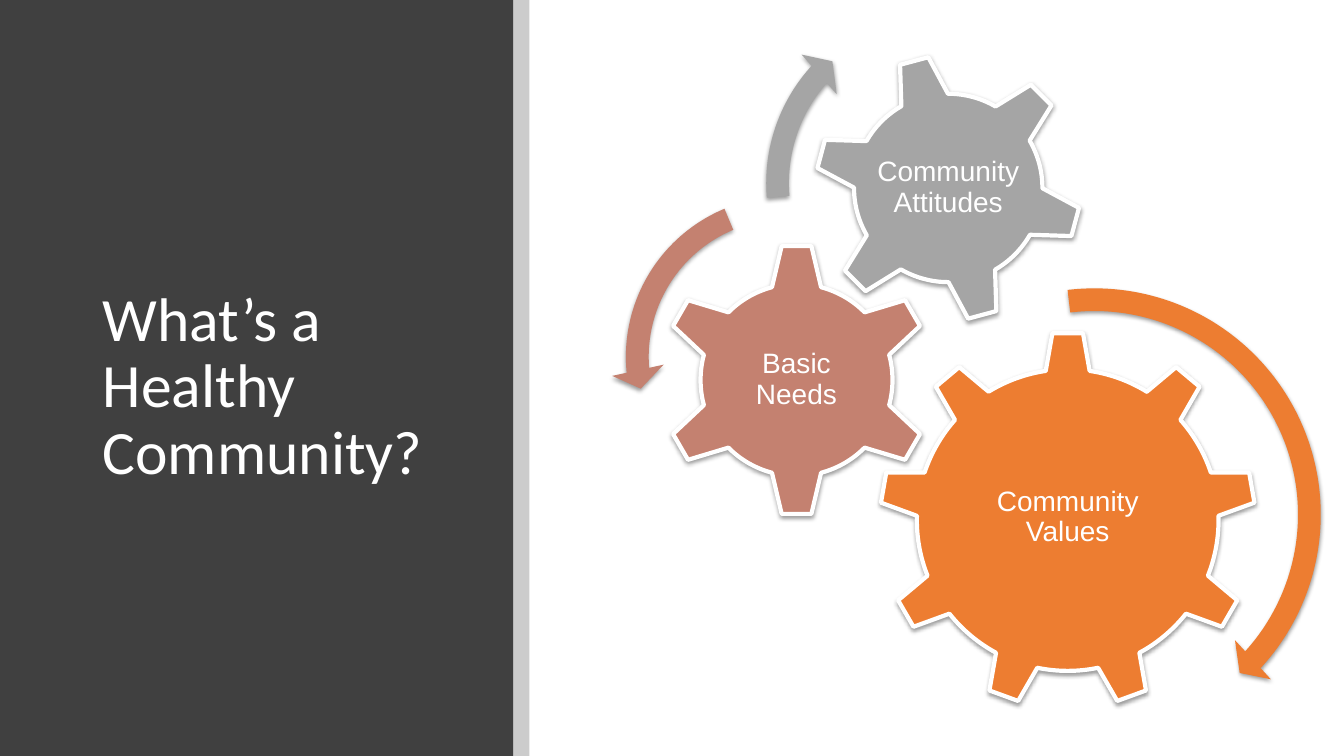
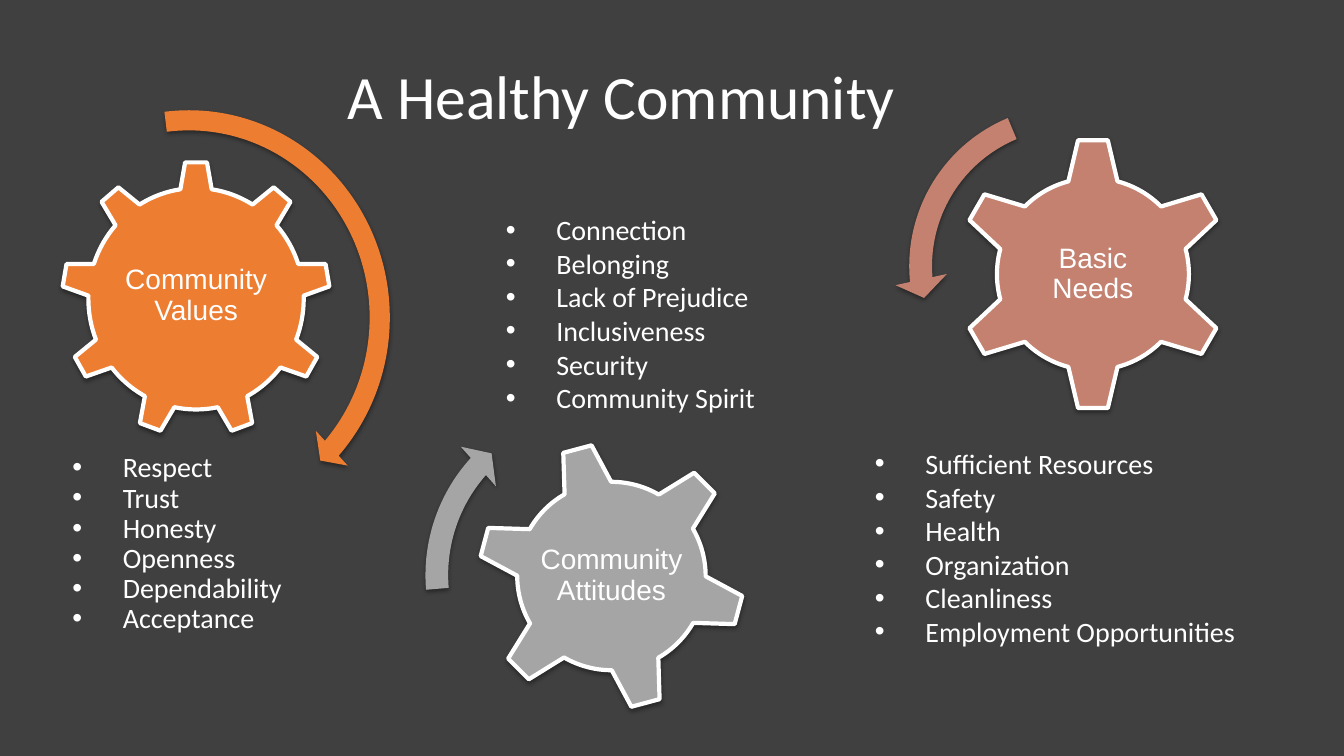
import dataclasses
import lxml.etree
import pptx
import pptx.dml.color
import pptx.enum.shapes
import pptx.enum.text
import pptx.oxml.ns
import pptx.util

Inch = pptx.util.Inches
Point = pptx.util.Pt
Form = pptx.enum.shapes.MSO_SHAPE
Align = pptx.enum.text.PP_ALIGN
Anchor = pptx.enum.text.MSO_ANCHOR


@dataclasses.dataclass(frozen=True)
class Theme:
    dark: str = "404040"
    white: str = "FFFFFF"
    black: str = "000000"
    orange: str = "ED7D31"
    rose: str = "C48170"
    gray: str = "A5A5A5"
    head: int = 44
    body: int = 20
    rim: int = 3
    font: str = "Calibri"
    gear_font: str = "Arial"


@dataclasses.dataclass(frozen=True)
class Gear:
    text: str
    color: str
    form: object
    turn: int
    label: tuple
    lift: float
    arrow: object
    bends: tuple


LOOK = Theme()
VALUES = Gear("Community Values", LOOK.orange, Form.GEAR_9, 0, (0.6, 0.51), 0.03,
              Form.CIRCULAR_ARROW, (0.047, 2.99, 25.499, 157.905, 0.055))
NEEDS = Gear("Basic Needs", LOOK.rose, Form.GEAR_6, 0, (0.5, 0.5), 0,
             Form.LEFT_CIRCULAR_ARROW, (0.065, 4.3, 104.891, 148.378, 0.075))
MOODS = Gear("Community Attitudes", LOOK.gray, Form.GEAR_6, 345, (0.56, 0.56), 0,
             Form.CIRCULAR_ARROW, (0.06, 3.941, 133.138, 105.082, 0.07))


def rgb(code):
    return pptx.dml.color.RGBColor.from_string(code)


def apply(item, values):
    for name, value in values.items():
        setattr(item, name, value)


def add_node(parent, tag, **values):
    node = lxml.etree.SubElement(parent, pptx.oxml.ns.qn("a:" + tag))
    for name, value in values.items():
        node.set(name, str(value))
    return node


def add_form(slide, form, box, color):
    shape = slide.shapes.add_shape(form, *map(Inch, box))
    shape.shadow.inherit = False
    shape.fill.solid()
    shape.fill.fore_color.rgb = rgb(color)
    shape.line.fill.background()
    return shape


def add_shade(shape):
    effects = shape._element.spPr.find(pptx.oxml.ns.qn("a:effectLst"))
    shade = add_node(effects, "outerShdw", blurRad=40000, dist=20000,
                     dir=5400000, rotWithShape=0)
    add_node(add_node(shade, "srgbClr", val=LOOK.black), "alpha", val=38000)


def add_text(slide, box, lines, size, font=LOOK.font, pad=(0.1, 0.05),
             anchor=Anchor.MIDDLE, **format):
    frame = slide.shapes.add_textbox(*map(Inch, box)).text_frame
    side, edge = map(Inch, pad)
    apply(frame, {"word_wrap": True, "vertical_anchor": anchor,
                  "margin_left": side, "margin_right": side,
                  "margin_top": edge, "margin_bottom": edge})
    frame.text = "\n".join(lines)
    for line in frame.paragraphs:
        apply(line, format)
        apply(line.font, {"size": Point(size), "name": font})
        line.font.color.rgb = rgb(LOOK.white)
        for run in line.runs:
            apply(run.font, {"size": Point(size), "name": font})
            run.font.color.rgb = rgb(LOOK.white)
    return frame


def add_title(slide, box, text):
    add_text(slide, box, [text], LOOK.head, line_spacing=0.9)


def add_list(slide, box, lines, indent=0.56, edge=0.1, **format):
    frame = add_text(slide, box, lines, LOOK.body, pad=(0.1, edge),
                     anchor=Anchor.TOP, **format)
    for line in frame.paragraphs:
        props = line._p.get_or_add_pPr()
        props.set("marL", str(Inch(indent)))
        props.set("indent", str(Inch(-0.5)))
        for child in props.findall(pptx.oxml.ns.qn("a:defRPr")):
            props.remove(child)
        add_node(add_node(props, "buClr"), "srgbClr", val=LOOK.white)
        add_node(props, "buFont", typeface="Arial")
        add_node(props, "buChar", char="•")
    return frame


def add_gear(slide, gear, box):
    left, top, width, height = box
    shape = add_form(slide, gear.form, box, gear.color)
    shape.rotation = gear.turn
    shape.line.color.rgb = rgb(LOOK.white)
    shape.line.width = Point(LOOK.rim)
    add_shade(shape)
    wide, high = width * gear.label[0], height * gear.label[1]
    inner = (left + (width - wide) / 2, top + (height - high) / 2 - gear.lift,
             wide, high)
    add_text(slide, inner, [gear.text], LOOK.body, LOOK.gear_font, (0.03, 0.03),
             alignment=Align.CENTER, line_spacing=0.9)


def add_arrow(slide, gear, box):
    shape = add_form(slide, gear.arrow, box, gear.color)
    for index, bend in enumerate(gear.bends):
        shape.adjustments[index] = bend
    add_shade(shape)


def add_gears(slide, parts):
    for gear, box, _ in parts:
        add_gear(slide, gear, box)
    for gear, _, box in parts:
        add_arrow(slide, gear, box)


def add_panel(slide, box):
    left, top, width, height = box
    add_form(slide, Form.RECTANGLE, box, LOOK.dark)
    add_title(slide, (left + 0.92, top + 0.89, 3.65, 5.91),
              "What’s a Healthy Community?")
    band = add_form(slide, Form.RECTANGLE, (left + width, top, 0.16, height),
                    LOOK.black)
    color = band._element.spPr.find(".//" + pptx.oxml.ns.qn("a:srgbClr"))
    add_node(color, "alpha", val=20000)


def build_intro(slide):
    add_panel(slide, (0, 0, 5.09, 7.5))
    add_gears(slide, [
        (VALUES, (8.72, 3.29, 3.74, 3.74), (8.46, 2.71, 4.79, 4.79)),
        (NEEDS, (6.54, 2.41, 2.72, 2.72), (6.06, 1.8, 3.48, 3.48)),
        (MOODS, (8.07, 0.53, 2.67, 2.67), (7.45, -0.06, 3.75, 3.75)),
    ])


def build_detail(slide):
    slide.background.fill.solid()
    slide.background.fill.fore_color.rgb = rgb(LOOK.dark)
    add_title(slide, (3.35, 0.26, 7.55, 1.45), "A Healthy Community")
    add_gears(slide, [
        (MOODS, (4.73, 4.38, 2.67, 2.67), (4.07, 3.83, 3.75, 3.75)),
        (NEEDS, (9.48, 1.36, 2.72, 2.72), (8.87, 0.9, 3.48, 3.48)),
        (VALUES, (0.61, 1.6, 2.67, 2.73), (-0.25, 0.96, 4.25, 4.38)),
    ])
    traits = add_list(slide, (0.56, 4.4, 3.16, 2.3),
                      ["Respect", "Trust", "Honesty", "Openness",
                       "Dependability", "Acceptance"], line_spacing=0.9)
    traits.paragraphs[0].space_before = Point(10)
    add_list(slide, (8.58, 4.38, 4.36, 2.2),
             ["Sufficient Resources", "Safety", "Health", "Organization",
              "Cleanliness", "Employment Opportunities"], 0.5, 0.05)
    add_list(slide, (4.86, 2.01, 4.36, 2.32),
             ["Connection", "Belonging", "Lack of Prejudice", "Inclusiveness",
              "Security", "Community Spirit"])


def main():
    deck = pptx.Presentation()
    apply(deck, {"slide_width": Inch(13.33), "slide_height": Inch(7.5)})
    for build in (build_intro, build_detail):
        build(deck.slides.add_slide(deck.slide_layouts[6]))
    deck.save("out.pptx")


if __name__ == "__main__":
    main()
